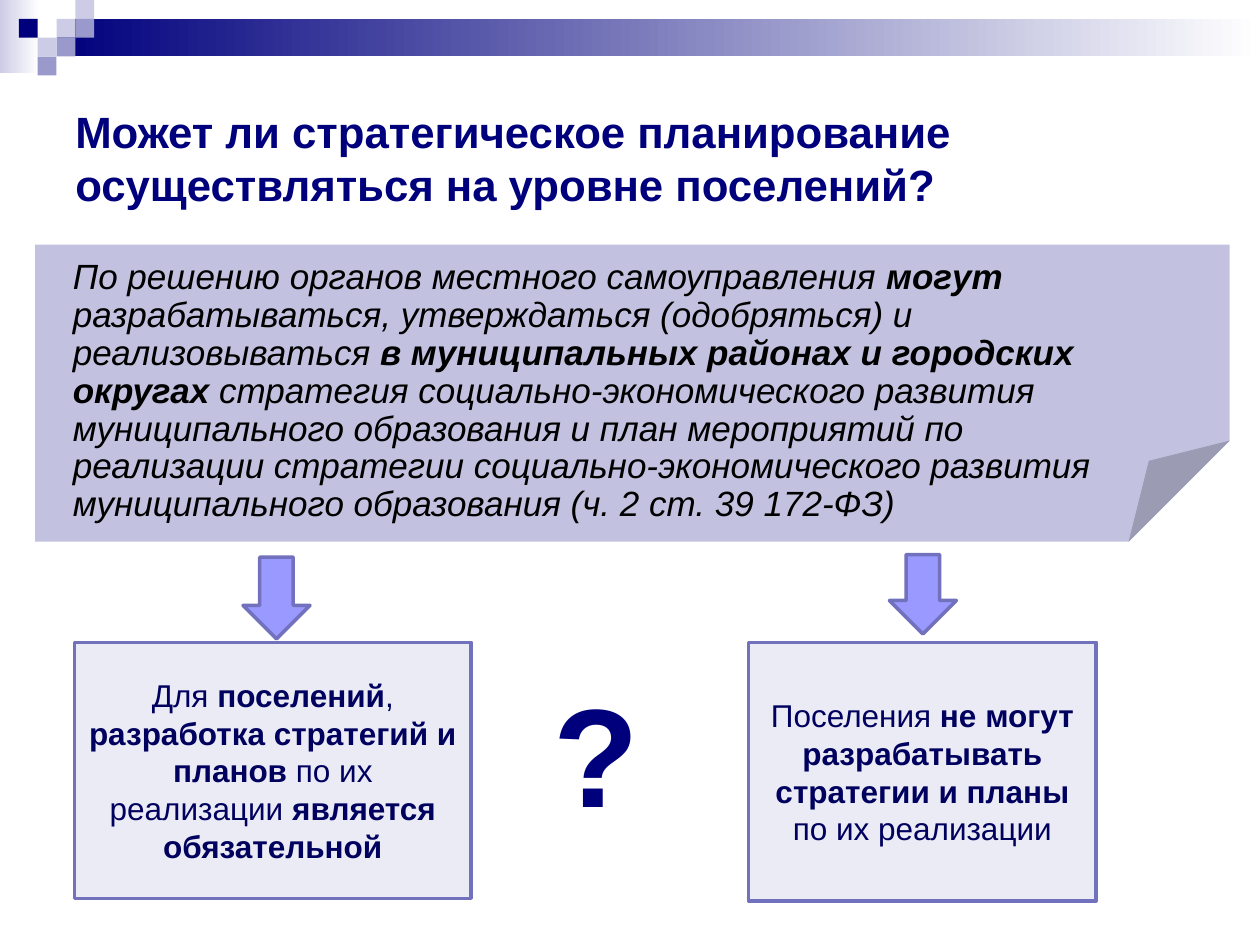
import pptx
import pptx.util
import pptx.dml.color
import pptx.enum.shapes
import pptx.enum.text
import pptx.oxml.ns
import lxml.etree
from dataclasses import dataclass

Cm = pptx.util.Cm
Kind = pptx.enum.shapes.MSO_SHAPE
Align = pptx.enum.text.PP_ALIGN
Anchor = pptx.enum.text.MSO_ANCHOR


@dataclass(frozen=True)
class Theme:
    font: str = "Arial"
    navy: str = "00007D"
    ink: str = "00005E"
    black: str = "000000"
    white: str = "FFFFFF"
    pale: str = "CCCCE6"
    mid: str = "9999CC"
    note: str = "C2C2E0"
    arrow: str = "9999FF"
    edge: str = "7171BD"
    panel: str = "EBEBF5"
    title: int = 25
    quote: int = 20
    body: int = 18
    mark: int = 80


theme = Theme()
rgb = pptx.dml.color.RGBColor.from_string
qn = pptx.oxml.ns.qn

deck = pptx.Presentation()
deck.slide_width, deck.slide_height = Cm(25.4), Cm(19.05)
slide = deck.slides.add_slide(deck.slide_layouts[6])


def draw(kind, box, fill, line=None):
    """Add a preset shape; a pair of colours as fill makes a gradient."""
    shape = slide.shapes.add_shape(kind, *map(Cm, box))
    shape.shadow.inherit = False
    if isinstance(fill, tuple):
        shape.fill.gradient()
        shape.fill.gradient_angle = 0
        for stop, tone in zip(shape.fill.gradient_stops, fill):
            stop.color.rgb = rgb(tone)
    else:
        shape.fill.solid()
        shape.fill.fore_color.rgb = rgb(fill)
    if line:
        shape.line.color.rgb = rgb(line)
        shape.line.width = pptx.util.Pt(2)
    else:
        shape.line.fill.background()
    return shape


def write(shape, parts, size, tone, align=Align.LEFT, anchor=Anchor.TOP, wrap=True):
    """Fill one paragraph with parts that are plain and bold by turns."""
    frame = shape.text_frame
    frame.word_wrap = wrap
    frame.vertical_anchor = anchor
    para = frame.paragraphs[0]
    para.alignment = align
    para.font.name = theme.font
    para.font.size = pptx.util.Pt(size)
    para.font.color.rgb = rgb(tone)
    for i, part in enumerate(parts):
        if part:
            run = para.add_run()
            run.text = part
            run.font.bold = i % 2 == 1
    return para


# Header: two fading bars under a mosaic of small squares
draw(Kind.RECTANGLE, (0, 0, 0.79, 1.47), (theme.pale, theme.white))
draw(Kind.RECTANGLE, (1.14, 0.38, 24.26, 0.76), (theme.navy, theme.white))
step = 0.38
tiles = [
    (3, 1, theme.pale), (4, 0, theme.pale), (4, 1, theme.mid), (2, 2, theme.pale),
    (1, 1, theme.navy), (3, 2, theme.mid), (2, 3, theme.mid),
]
for col, row, tone in tiles:
    draw(Kind.RECTANGLE, (col * step, row * step, step, step), tone)

# Title
title = slide.shapes.add_textbox(Cm(1.27), Cm(1.27), Cm(22.86), Cm(3.81))
write(title, ["", "Может ли стратегическое планирование осуществляться на уровне поселений?"],
      theme.title, theme.navy, anchor=Anchor.MIDDLE)

# Quoted law on a folded sheet; python-pptx lists no adjustment for its fold
sheet = draw(Kind.FOLDED_CORNER, (0.71, 4.93, 24.08, 5.99), theme.note)
geom = next(sheet.element.iter(qn("a:prstGeom")))
for old in list(geom):
    geom.remove(old)
fold = lxml.etree.SubElement(geom, qn("a:avLst"))
lxml.etree.SubElement(fold, qn("a:gd"), name="adj", fmla="val 34000")

quote = slide.shapes.add_textbox(Cm(1.22), Cm(5.11), Cm(21.21), Cm(5.64))
law = write(quote, [
    "По решению органов местного самоуправления ",
    "могут",
    " разрабатываться, утверждаться (одобряться) и реализовываться ",
    "в муниципальных районах и городских округах ",
    "стратегия социально-экономического развития муниципального образования и план "
    "мероприятий по реализации стратегии социально-экономического развития "
    "муниципального образования (ч. 2 ст. 39 172-ФЗ)",
], theme.quote, theme.black)
law.font.italic = True
law.line_spacing = 0.9

# Two opposing readings, each under its arrow
views = [
    ((4.9, 11.23, 1.35, 1.65), (1.5, 12.95, 8, 5.16),
     ["Для ", "поселений", ", ", "разработка стратегий и планов ",
      "по их реализации ", "является обязательной"]),
    ((17.93, 11.18, 1.35, 1.6), (15.09, 12.95, 7.01, 5.21),
     ["Поселения ", "не могут разрабатывать стратегии и планы ",
      "по их реализации"]),
]
for arrow, box, parts in views:
    draw(Kind.DOWN_ARROW, arrow, theme.arrow, theme.edge)
    panel = draw(Kind.RECTANGLE, box, theme.panel, theme.edge)
    write(panel, parts, theme.body, theme.ink, Align.CENTER, Anchor.MIDDLE)

mark = slide.shapes.add_textbox(Cm(10.9), Cm(13.34), Cm(2.26), Cm(3.68))
write(mark, ["", "?"], theme.mark, theme.navy, wrap=False)

deck.save("out.pptx")
